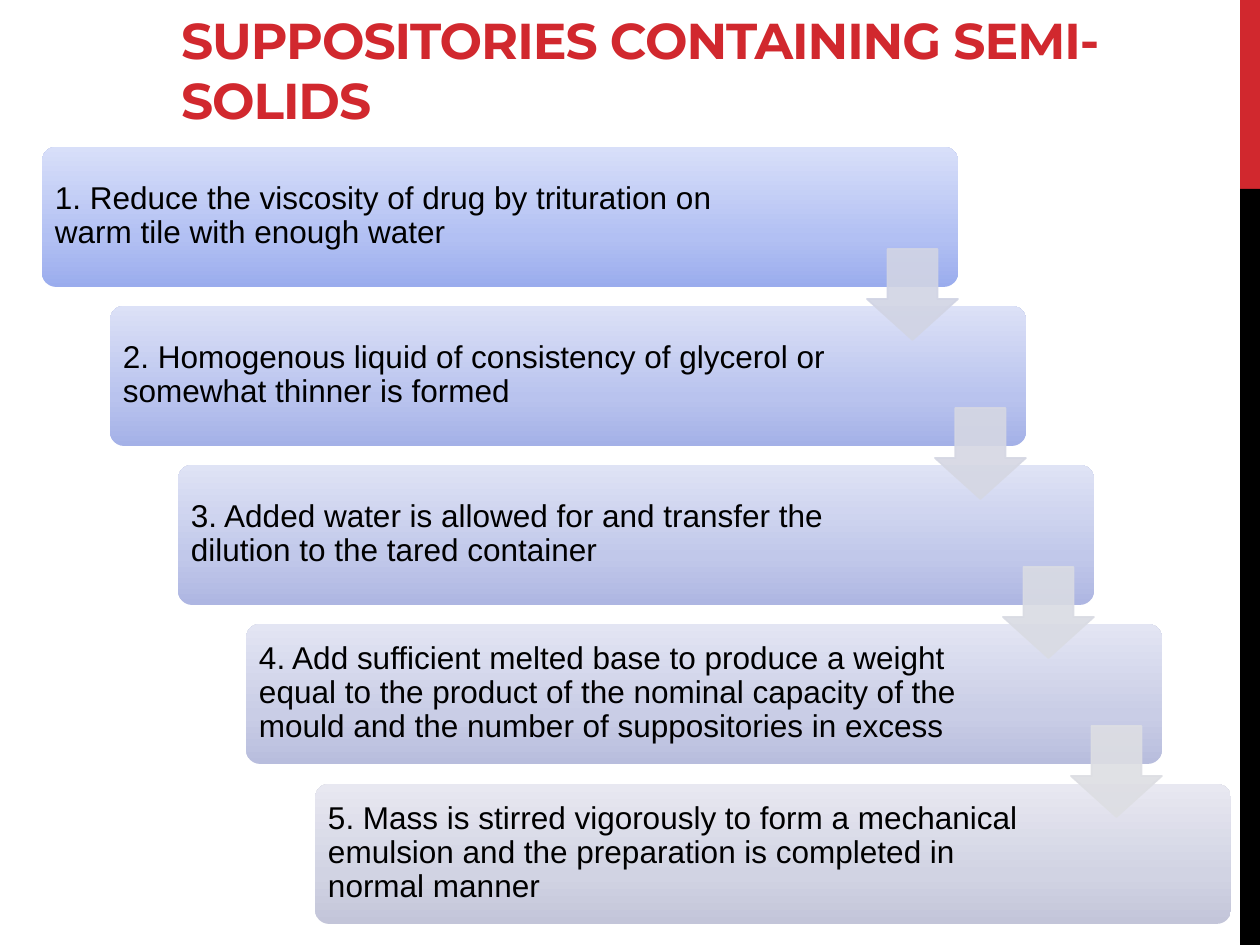
"""Build a slide with a five-step cascade for suppositories containing semi-solids."""
from copy import deepcopy

from lxml.etree import SubElement
from pptx import Presentation
from pptx.dml.color import RGBColor
from pptx.enum.shapes import MSO_SHAPE as Shape
from pptx.enum.text import MSO_ANCHOR as Anchor, PP_ALIGN as Align
from pptx.oxml.ns import qn
from pptx.util import Emu, Pt

SCALE = 914400 / 126
WIDTH, HEIGHT = 1260, 945

TITLE = "SUPPOSITORIES CONTAINING SEMI-SOLIDS"
TITLE_BOX = (168, 38, 1063, 98)
TITLE_FONT = {"name": "Montserrat", "size": Pt(28.8), "bold": True}
STEP_FONT = {"name": "Arial", "size": Pt(18), "bold": False}

SIDE_BARS = [
    ((1240, 0, 20, 189), "D1282E"),
    ((1240, 189, 20, 756), "000000"),
]

STEPS = [
    ("1. Reduce the viscosity of drug by trituration on warm tile with enough water",
     ("9AACED", "B2C0F3", "D8DFF9")),
    ("2. Homogenous liquid of consistency of glycerol or somewhat thinner is formed",
     ("A4B1E7", "B9C3EE", "DCE1F7")),
    ("3. Added water is allowed for and transfer the dilution to the tared container",
     ("AEB6E2", "C1C8EA", "DFE3F5")),
    ("4. Add sufficient melted base to produce a weight equal to the product of the "
     "nominal capacity of the mould and the number of suppositories in excess",
     ("B8BDDD", "C9CDE6", "E3E5F3")),
    ("5. Mass is stirred vigorously to form a mechanical emulsion and the preparation "
     "is completed in normal manner",
     ("C3C5D9", "D1D3E3", "E8E8F1")),
]
ARROW_COLORS = ["D1D4E4", "D5D7E3", "D9DBE3", "DDDEE3"]
GRADIENT_POSITIONS = (0, 0.35, 1)

FIRST_LEFT, FIRST_TOP = 42, 147
CASCADE_WIDTH, CASCADE_HEIGHT = 273, 637
STEP_SIZE = (916, 140)
TEXT_OFFSET, TEXT_SIZE = 4, (748, 131)
ARROW_OFFSET, ARROW_SIZE = (825, 102), (91, 91)


def px(value):
    return Emu(round(value * SCALE))


def rgb(code):
    return RGBColor.from_string(code)


def set_values(target, values):
    for name, value in values.items():
        setattr(target, name, value)


def add_shape(slide, kind, box, adjustments=()):
    shape = slide.shapes.add_shape(kind, *map(px, box))
    shape.shadow.inherit = False
    shape.line.fill.background()
    for index, value in enumerate(adjustments):
        shape.adjustments[index] = value
    return shape


def fill_solid(fill, code):
    fill.solid()
    fill.fore_color.rgb = rgb(code)


def fill_gradient(shape, codes):
    shape.fill.gradient()
    shape.fill.gradient_angle = 90
    stop_list = shape._element.spPr.find(".//" + qn("a:gsLst"))
    stop_list.insert(1, deepcopy(stop_list[0]))
    for stop, position, code in zip(shape.fill.gradient_stops, GRADIENT_POSITIONS, codes):
        stop.position = position
        stop.color.rgb = rgb(code)


def add_text(slide, box, text, font, color, anchor, insets, spacing):
    frame = slide.shapes.add_textbox(*map(px, box)).text_frame
    horizontal, vertical = map(px, insets)
    set_values(frame, {
        "word_wrap": True, "vertical_anchor": anchor,
        "margin_left": horizontal, "margin_right": horizontal,
        "margin_top": vertical, "margin_bottom": vertical,
    })
    paragraph = frame.paragraphs[0]
    set_values(paragraph, {"alignment": Align.LEFT, "line_spacing": spacing})
    run = paragraph.add_run()
    run.text = text
    set_values(run.font, font)
    run.font.color.rgb = rgb(color)
    return run


def add_step(slide, left, top, text, codes):
    shape = add_shape(slide, Shape.ROUNDED_RECTANGLE, (left, top, *STEP_SIZE), (0.1,))
    fill_gradient(shape, codes)
    box = (left + TEXT_OFFSET, top + TEXT_OFFSET, *TEXT_SIZE)
    add_text(slide, box, text, STEP_FONT, "000000", Anchor.MIDDLE, (9, 9), 0.9)


def add_arrow(slide, left, top, code):
    box = (left + ARROW_OFFSET[0], top + ARROW_OFFSET[1], *ARROW_SIZE)
    shape = add_shape(slide, Shape.DOWN_ARROW, box, (0.55, 0.45))
    shape.line.width = Pt(1)
    for fill in (shape.fill, shape.line.fill):
        fill_solid(fill, code)
    for color in shape._element.spPr.iter(qn("a:srgbClr")):
        SubElement(color, qn("a:alpha"), val="90000")


def main():
    presentation = Presentation()
    set_values(presentation, {"slide_width": px(WIDTH), "slide_height": px(HEIGHT)})
    slide = presentation.slides.add_slide(presentation.slide_layouts[6])

    for box, code in SIDE_BARS:
        fill_solid(add_shape(slide, Shape.RECTANGLE, box).fill, code)

    title = add_text(slide, TITLE_BOX, TITLE, TITLE_FONT, "D1282E", Anchor.BOTTOM, (13, 6), 1.0)
    title.font._element.set("spc", "-60")

    gaps = len(STEPS) - 1
    corners = [
        (FIRST_LEFT + CASCADE_WIDTH * i // gaps, FIRST_TOP + CASCADE_HEIGHT * i // gaps)
        for i in range(len(STEPS))
    ]
    for corner, (text, codes) in zip(corners, STEPS):
        add_step(slide, *corner, text, codes)
    for corner, code in zip(corners, ARROW_COLORS):
        add_arrow(slide, *corner, code)

    presentation.save("out.pptx")


if __name__ == "__main__":
    main()
